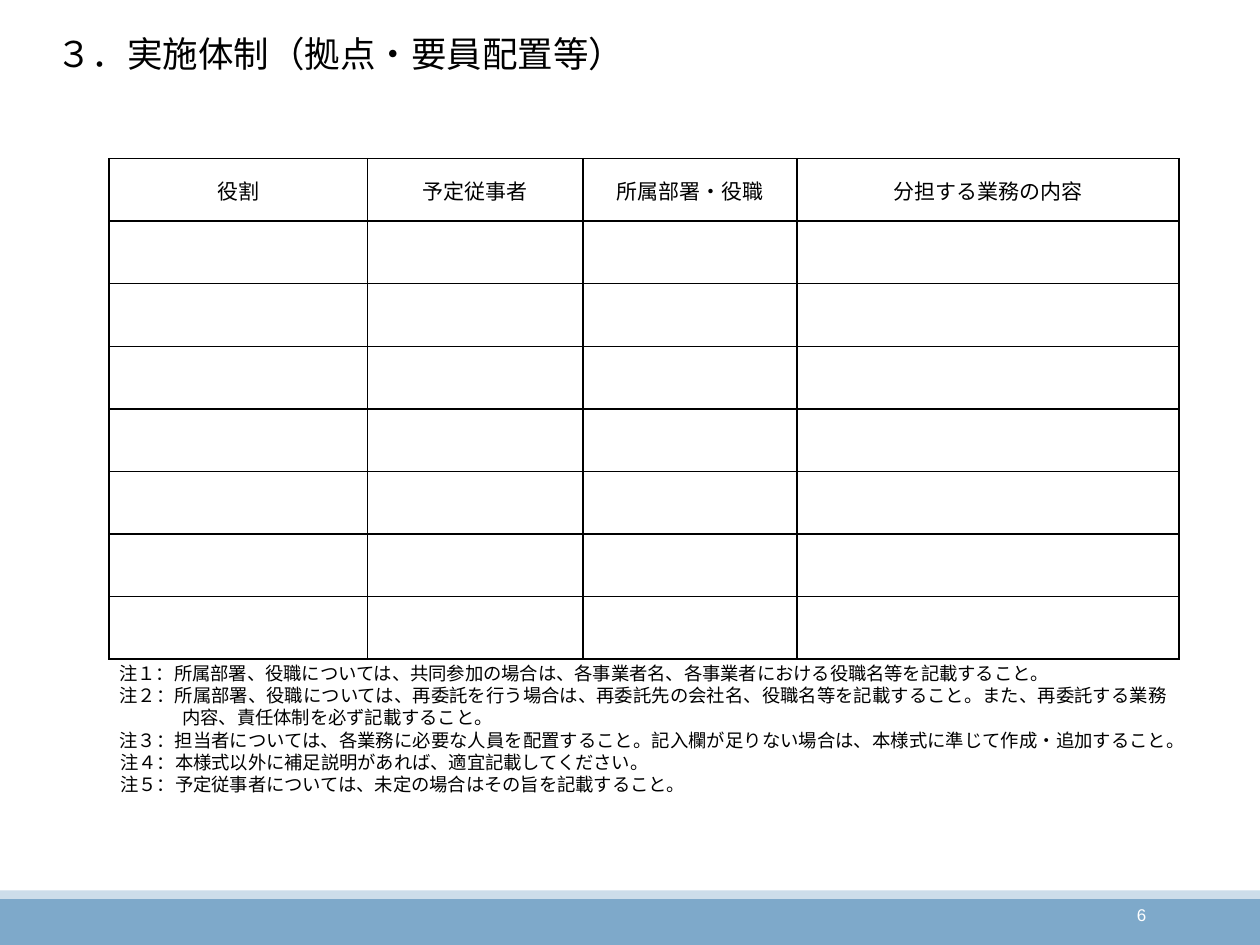
from lxml.etree import SubElement
from pptx import Presentation
from pptx.dml.color import RGBColor
from pptx.enum.shapes import MSO_SHAPE
from pptx.enum.text import MSO_ANCHOR, PP_ALIGN
from pptx.oxml import parse_xml
from pptx.oxml.ns import nsdecls, qn
from pptx.util import Cm, Pt

THEME = {
    "font": "Noto Sans CJK JP", "number_font": "Arial",
    "ink": "000000", "paper": "FFFFFF", "band": "7EA9CA", "band_edge": "CCDDEA",
    "title": 20.3, "table": 12, "note": 10.5, "note_line": 12.6, "number": 9.7,
}

TITLE = "３．実施体制（拠点・要員配置等）"
PAGE_NUMBER = "6"
COLUMNS = [("役割", 5.21), ("予定従事者", 4.34), ("所属部署・役職", 4.32), ("分担する業務の内容", 7.7)]
BLANK_ROWS = 7
ROW_HEIGHT = 1.26
WIDE, NARROW = (2.11, -1.27), (1.14, -0.28)  # left margin and first-line indent
NOTES = [
    ("注１：所属部署、役職については、共同参加の場合は、各事業者名、各事業者における役職名等を記載すること。", WIDE),
    ("注２：所属部署、役職については、再委託を行う場合は、再委託先の会社名、役職名等を記載すること。"
     "また、再委託する業務内容、責任体制を必ず記載すること。", WIDE),
    ("注３：担当者については、各業務に必要な人員を配置すること。"
     "記入欄が足りない場合は、本様式に準じて作成・追加すること。", WIDE),
    ("注４：本様式以外に補足説明があれば、適宜記載してください。", NARROW),
    ("注５：予定従事者については、未定の場合はその旨を記載すること。", NARROW),
]
BANDS = [("band", 18.1, 0.95), ("band_edge", 17.95, 0.17)]


def color(name):
    return RGBColor.from_string(THEME[name])


def add_span(para, text, size, font="font", ink="ink"):
    span = para.add_run()
    span.text = text
    span.font.size = Pt(THEME[size])
    span.font.name = THEME[font]
    span.font.color.rgb = color(ink)
    SubElement(span.font._element, qn("a:ea"), typeface=THEME[font])


def add_box(page, left, top, width, height, anchor=MSO_ANCHOR.MIDDLE):
    frame = page.shapes.add_textbox(Cm(left), Cm(top), Cm(width), Cm(height)).text_frame
    frame.word_wrap = True
    frame.vertical_anchor = anchor
    return frame


def add_bands(page, page_width):
    for name, top, height in BANDS:
        band = page.shapes.add_shape(MSO_SHAPE.RECTANGLE, 0, Cm(top), page_width, Cm(height))
        band.shadow.inherit = False
        band.fill.solid()
        band.fill.fore_color.rgb = color(name)
        band.line.fill.background()


def style_cell(cell):
    """White fill, tight margins and a 1 pt line on all four sides."""
    cell.fill.solid()
    cell.fill.fore_color.rgb = color("paper")
    cell.vertical_anchor = MSO_ANCHOR.MIDDLE
    cell.margin_left = cell.margin_right = Cm(0.18)
    cell.margin_top = cell.margin_bottom = 0
    properties = cell._tc.get_or_add_tcPr()
    for position, side in enumerate(("lnL", "lnR", "lnT", "lnB")):
        properties.insert(position, parse_xml(
            f'<a:{side} {nsdecls("a")} w="{Pt(1)}"><a:solidFill>'
            f'<a:srgbClr val="{THEME["ink"]}"/></a:solidFill></a:{side}>'))


def add_staff_table(page):
    row_count = BLANK_ROWS + 1
    width = sum(column_width for _, column_width in COLUMNS)
    table = page.shapes.add_table(row_count, len(COLUMNS), Cm(2.2), Cm(3.2),
                                  Cm(width), Cm(ROW_HEIGHT * row_count)).table
    for row in table.rows:
        row.height = Cm(ROW_HEIGHT)
    for cell in table.iter_cells():
        style_cell(cell)
    for index, (heading, column_width) in enumerate(COLUMNS):
        table.columns[index].width = Cm(column_width)
        para = table.cell(0, index).text_frame.paragraphs[0]
        para.alignment = PP_ALIGN.CENTER
        add_span(para, heading, "table")


def add_notes(page):
    frame = add_box(page, 1.32, 13.23, 22.48, 3.4, MSO_ANCHOR.TOP)
    for index, (text, (margin, indent)) in enumerate(NOTES):
        para = frame.add_paragraph() if index else frame.paragraphs[0]
        para.alignment = PP_ALIGN.JUSTIFY
        para.line_spacing = Pt(THEME["note_line"])
        properties = para._p.get_or_add_pPr()
        properties.set("marL", str(Cm(margin)))
        properties.set("indent", str(Cm(indent)))
        add_span(para, text, "note")


def main():
    deck = Presentation()
    deck.slide_width, deck.slide_height = Cm(25.4), Cm(19.05)
    page = deck.slides.add_slide(deck.slide_layouts[6])
    add_bands(page, deck.slide_width)

    number = add_box(page, 20.62, 17.93, 2.74, 1.02).paragraphs[0]
    number.alignment = PP_ALIGN.RIGHT
    add_span(number, PAGE_NUMBER, "number", "number_font", "paper")

    title = add_box(page, 0.89, 0.51, 20.7, 1.12).paragraphs[0]
    add_span(title, TITLE, "title")
    add_staff_table(page)
    add_notes(page)
    deck.save("out.pptx")


if __name__ == "__main__":
    main()
